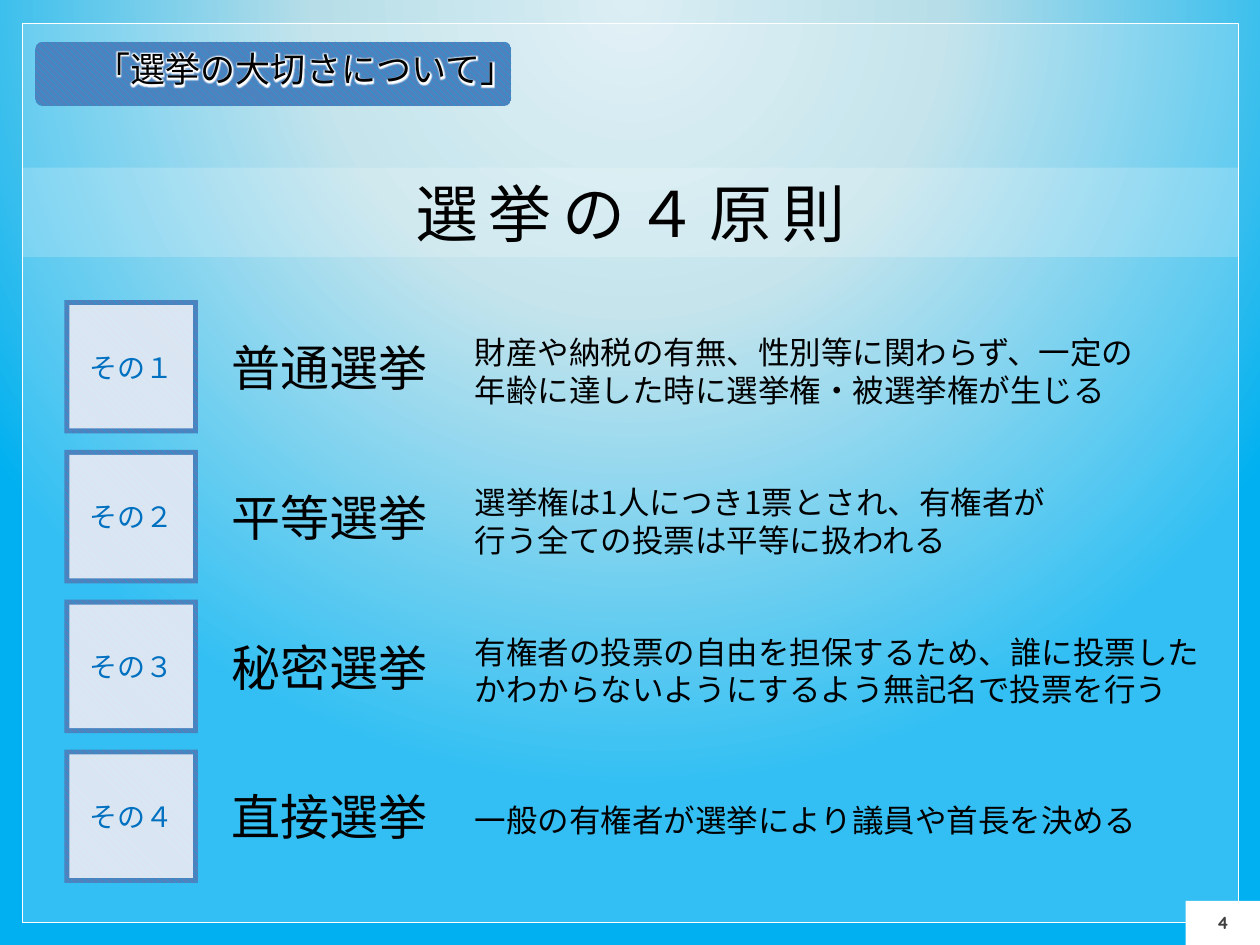
from lxml import etree
from pptx import Presentation
from pptx.dml.color import RGBColor
from pptx.enum.dml import MSO_PATTERN
from pptx.enum.shapes import MSO_SHAPE as Shape
from pptx.enum.text import MSO_ANCHOR, PP_ALIGN as Align
from pptx.oxml import parse_xml
from pptx.oxml.ns import nsdecls, qn
from pptx.util import Cm, Pt

# Content
TOPIC = "「選挙の大切さについて」"
TITLE = "選挙の４原則"
PAGE = "4"
PRINCIPLES = [
    ("その１", "普通選挙", ["財産や納税の有無、性別等に関わらず、一定の",
                      "年齢に達した時に選挙権・被選挙権が生じる"]),
    ("その２", "平等選挙", ["選挙権は1人につき1票とされ、有権者が",
                      "行う全ての投票は平等に扱われる"]),
    ("その３", "秘密選挙", ["有権者の投票の自由を担保するため、誰に投票した",
                      "かわからないようにするよう無記名で投票を行う"]),
    ("その４", "直接選挙", ["一般の有権者が選挙により議員や首長を決める"]),
]
BACKDROP = [(0, "DBEEF4"), (40, "B7DEE8"), (100, "00B0F0")]
JAPANESE = "Noto Sans CJK JP"

# Layout in centimetres
WIDTH, HEIGHT = 25.4, 19.05
FRAME_LEFT, FRAME_WIDTH = 0.46, 24.5
ROW_TOP, ROW_STEP = 6.05, 3.02
TILE_LEFT, TILE_SIZE, TILE_BORDER = 1.3, 2.69, 0.1
NAME_LEFT, NAME_WIDTH, NAME_HEIGHT = 4.42, 4.5, 1.45
DETAIL_LEFT, DETAIL_WIDTH, LINE_HEIGHT = 9.32, 15.37, 0.76


def rgb(value):
    return RGBColor.from_string(value)


def place(shape, left, top, width, height):
    shape.left, shape.top = Cm(left), Cm(top)
    shape.width, shape.height = Cm(width), Cm(height)


def add_box(shapes, kind, *area):
    box = shapes.add_shape(kind, *map(Cm, area))
    box.shadow.inherit = False
    box.line.fill.background()
    return box


def fill_white(shape, opacity=100):
    shape.fill.solid()
    shape.fill.fore_color.rgb = rgb("FFFFFF")
    color = shape.fill._xPr.find(qn("a:solidFill"))[0]
    etree.SubElement(color, qn("a:alpha"), val=str(opacity * 1000))


def fill_stripes(shape):
    shape.fill.patterned()
    shape.fill.pattern = MSO_PATTERN.WIDE_DOWNWARD_DIAGONAL
    shape.fill.fore_color.rgb = rgb("00B0F0")
    shape.fill.back_color.rgb = rgb("4F81BD")


def write(shape, text, size, color="000000", align=Align.LEFT, font=JAPANESE,
          bold=False, wrap=True, pitch=None):
    frame = shape.text_frame
    frame.text = text
    frame.word_wrap = wrap
    frame.vertical_anchor = MSO_ANCHOR.MIDDLE
    for paragraph in frame.paragraphs:
        paragraph.alignment = align
        if pitch:
            paragraph.line_spacing = Pt(pitch)
        for run in paragraph.runs:
            run.font.size, run.font.bold = Pt(size), bold
            run.font.color.rgb = rgb(color)
            run.font.name = font
            east_asian = etree.Element(qn("a:ea"), typeface=font)
            run.font._element.find(qn("a:latin")).addnext(east_asian)
    return frame.paragraphs[0].runs[0].font._element


def set_insets(frame, left, top, right, bottom):
    frame.margin_left, frame.margin_top = Cm(left), Cm(top)
    frame.margin_right, frame.margin_bottom = Cm(right), Cm(bottom)


prs = Presentation()
prs.slide_width, prs.slide_height = Cm(WIDTH), Cm(HEIGHT)
slide = prs.slides.add_slide(prs.slide_layouts[5])
shapes = slide.shapes

# Backdrop with a glow from the top centre, and the pale frame
backdrop = add_box(shapes, Shape.RECTANGLE, 0, 0, WIDTH, HEIGHT)
stops = "".join(f'<a:gs pos="{pos * 1000}"><a:srgbClr val="{color}"/></a:gs>'
                for pos, color in BACKDROP)
gradient = parse_xml(
    f'<a:gradFill {nsdecls("a")} rotWithShape="1"><a:gsLst>{stops}</a:gsLst>'
    '<a:path path="circle"><a:fillToRect l="50000" r="50000" b="100000"/></a:path>'
    '</a:gradFill>')
backdrop._element.spPr.find(qn("a:prstGeom")).addnext(gradient)
frame_box = add_box(shapes, Shape.RECTANGLE, FRAME_LEFT, 0.48, FRAME_WIDTH, 18.11)
fill_white(frame_box, 20)
frame_box.line.color.rgb = rgb("FFFFFF")
frame_box.line.width = Pt(0.5)

# Page number
page_box = add_box(shapes, Shape.RECTANGLE, 23.9, 18.16, 1.5, 0.89)
fill_white(page_box)
write(page_box, PAGE, 10, "404040", Align.CENTER, "Quicksand", True, wrap=False)
set_insets(page_box.text_frame, 0.1, 0.1, 0.1, 0.1)

# Topic badge, its text box wide enough for one line
badge = add_box(shapes, Shape.ROUNDED_RECTANGLE, 0.71, 0.84, 9.6, 1.3)
badge.adjustments[0] = 0.12
fill_stripes(badge)
topic = shapes.add_textbox(Cm(1.63), Cm(0.99), Cm(9.2), Cm(0.99))
topic_format = write(topic, TOPIC, 20, wrap=False)
set_insets(topic.text_frame, 0.3, 0.1, 0.3, 0.3)
white = '<a:srgbClr val="FFFFFF"/>'
outline = f'<a:ln {nsdecls("a")} w="12700"><a:solidFill>{white}</a:solidFill></a:ln>'
glow = f'<a:effectLst {nsdecls("a")}><a:glow rad="63500">{white}</a:glow></a:effectLst>'
topic_format.find(qn("a:solidFill")).addnext(parse_xml(glow))
topic_format.insert(0, parse_xml(outline))

# Title band, brought in front of the backdrop
title = shapes.title
place(title, FRAME_LEFT, 3.38, FRAME_WIDTH, 1.8)
fill_white(title, 20)
write(title, TITLE, 36, align=Align.CENTER).set("spc", "600")
backdrop._element.getparent().append(title._element)

# One row for each principle
for index, (label, name, details) in enumerate(PRINCIPLES):
    top = ROW_TOP + index * ROW_STEP
    middle = top + TILE_SIZE / 2
    tile = shapes.add_group_shape().shapes
    fill_stripes(add_box(tile, Shape.RECTANGLE, TILE_LEFT, top, TILE_SIZE, TILE_SIZE))
    inner = TILE_SIZE - 2 * TILE_BORDER
    face = add_box(tile, Shape.RECTANGLE, TILE_LEFT + TILE_BORDER,
                   top + TILE_BORDER, inner, inner)
    fill_white(face, 80)
    write(face, label, 16, "0070C0", Align.CENTER)

    name_box = shapes.add_textbox(Cm(NAME_LEFT), Cm(middle - NAME_HEIGHT / 2),
                                  Cm(NAME_WIDTH), Cm(NAME_HEIGHT))
    write(name_box, name, 28, wrap=False)

    height = len(details) * LINE_HEIGHT + 0.26
    detail_box = shapes.add_textbox(Cm(DETAIL_LEFT), Cm(middle + 0.08 - height / 2),
                                    Cm(DETAIL_WIDTH), Cm(height))
    write(detail_box, "\n".join(details), 18, pitch=21.6)

prs.save("out.pptx")
